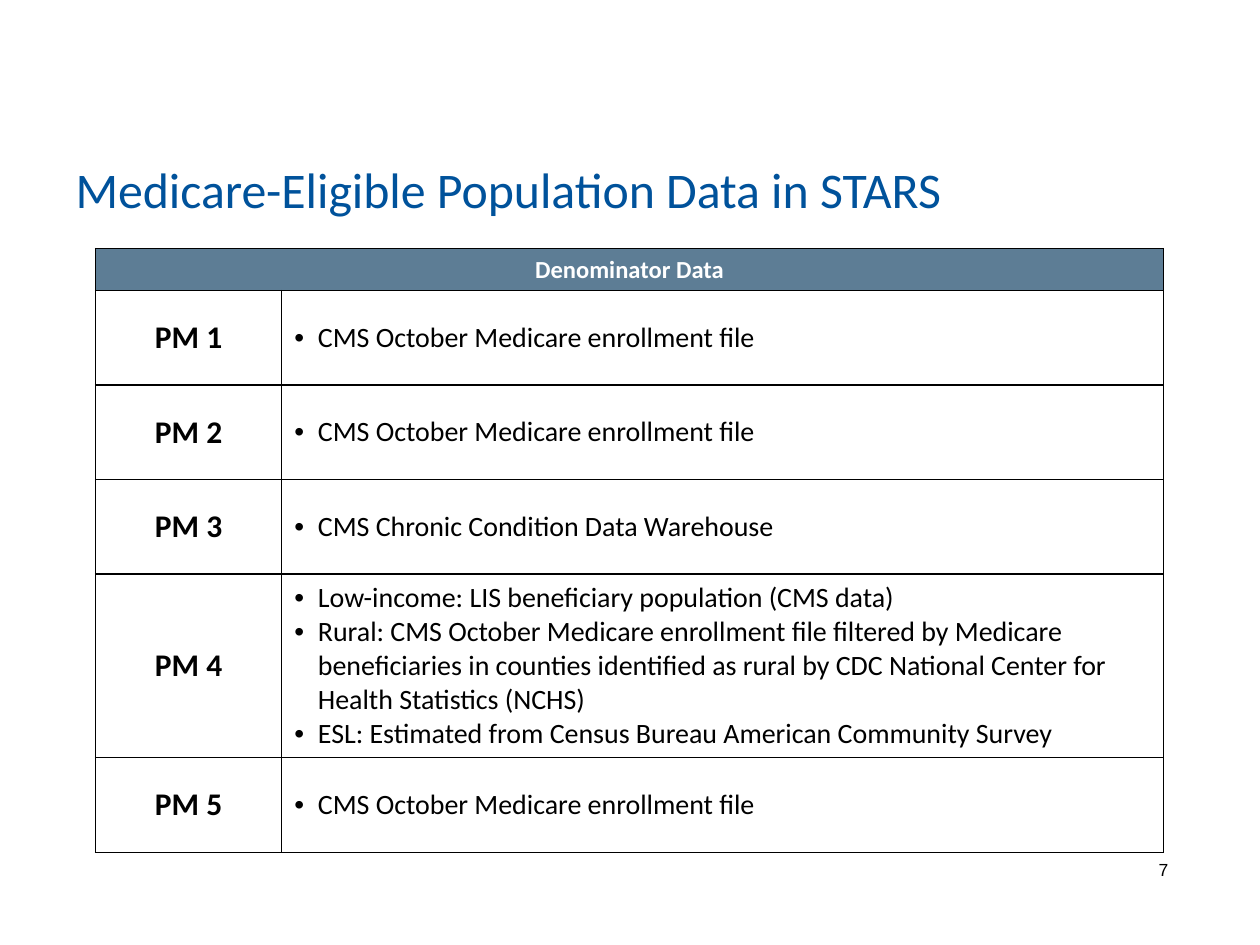
from dataclasses import dataclass

from lxml.etree import SubElement
from pptx import Presentation
from pptx.dml.color import RGBColor
from pptx.enum.text import MSO_ANCHOR as Anchor, MSO_AUTO_SIZE as AutoSize, PP_ALIGN as Align
from pptx.oxml.ns import qn
from pptx.slide import Slide
from pptx.table import Table, _Cell as Cell
from pptx.text.text import _Paragraph as Paragraph
from pptx.util import Length, Pt


@dataclass(frozen=True)
class Theme:
    """Colours, fonts and type sizes of the slide."""
    title: str = "00529B"
    header: str = "5D7D95"
    paper: str = "FFFFFF"
    ink: str = "000000"
    font: str = "Calibri"
    number_font: str = "Arial"
    title_size: Length = Pt(28.5)
    header_size: Length = Pt(14)
    label_size: Length = Pt(18)
    source_size: Length = Pt(16)
    number_size: Length = Pt(10)
    border: Length = Pt(0.75)
    indent: Length = Pt(13.5)


@dataclass(frozen=True)
class Measure:
    """One performance measure with its data sources."""
    label: str
    sources: tuple[str, ...]
    height: Length = Pt(54)


THEME = Theme()
ENROLLMENT = ("CMS October Medicare enrollment file",)
MEASURES = (
    Measure("PM 1", ENROLLMENT),
    Measure("PM 2", ENROLLMENT),
    Measure("PM 3", ("CMS Chronic Condition Data Warehouse",)),
    Measure("PM 4", (
        "Low-income: LIS beneficiary population (CMS data)",
        "Rural: CMS October Medicare enrollment file filtered by Medicare "
        "beneficiaries in counties identified as rural by CDC National Center "
        "for Health Statistics (NCHS)",
        "ESL: Estimated from Census Bureau American Community Survey",
    ), Pt(105)),
    Measure("PM 5", ENROLLMENT),
)


def add_run(paragraph: Paragraph, text: str, size: Length, color: str,
            bold: bool = False, font: str = THEME.font) -> None:
    """Add one formatted run to a paragraph."""
    run = paragraph.add_run()
    run.text = text
    run.font.name = font
    run.font.size = size
    run.font.bold = bold
    run.font.color.rgb = RGBColor.from_string(color)


def add_bullet(paragraph: Paragraph) -> None:
    """Give a paragraph a hanging round bullet."""
    properties = paragraph._p.get_or_add_pPr()
    properties.set("marL", str(THEME.indent))
    properties.set("indent", str(-THEME.indent))
    SubElement(properties, qn("a:buFont"), typeface="Arial")
    SubElement(properties, qn("a:buChar"), char="•")


def style_cell(cell: Cell, fill: str) -> None:
    """Set the borders, fill and vertical anchor of a cell."""
    properties = cell._tc.get_or_add_tcPr()
    for side in ("lnL", "lnR", "lnT", "lnB"):
        line = SubElement(properties, qn(f"a:{side}"), w=str(THEME.border))
        SubElement(SubElement(line, qn("a:solidFill")), qn("a:srgbClr"), val=THEME.ink)
    cell.fill.solid()
    cell.fill.fore_color.rgb = RGBColor.from_string(fill)
    cell.vertical_anchor = Anchor.MIDDLE


def add_centred(cell: Cell, text: str, size: Length, color: str) -> None:
    """Write one bold centred line in a cell."""
    paragraph = cell.text_frame.paragraphs[0]
    paragraph.alignment = Align.CENTER
    add_run(paragraph, text, size, color, bold=True)


def fill_measure(table: Table, row: int, measure: Measure) -> None:
    """Write the label and bulleted sources of a measure in a row."""
    table.rows[row].height = measure.height
    label, sources = table.cell(row, 0), table.cell(row, 1)
    for cell in (label, sources):
        style_cell(cell, THEME.paper)
    add_centred(label, measure.label, THEME.label_size, THEME.ink)
    frame = sources.text_frame
    for index, source in enumerate(measure.sources):
        paragraph = frame.add_paragraph() if index else frame.paragraphs[0]
        add_bullet(paragraph)
        add_run(paragraph, source, THEME.source_size, THEME.ink)


def add_title(slide: Slide, text: str) -> None:
    """Place and write the slide title."""
    title = slide.shapes.title
    title.left, title.top, title.width, title.height = Pt(36), Pt(83.5), Pt(648), Pt(48)
    frame = title.text_frame
    frame.auto_size = AutoSize.NONE
    frame.vertical_anchor = Anchor.MIDDLE
    frame.paragraphs[0].alignment = Align.LEFT
    add_run(frame.paragraphs[0], text, THEME.title_size, THEME.title)


def add_measure_table(slide: Slide) -> None:
    """Add the table of denominator data."""
    header_height = Pt(24)
    widths = (Pt(106.5), Pt(504))
    height = header_height + sum(measure.height for measure in MEASURES)
    table = slide.shapes.add_table(
        len(MEASURES) + 1, len(widths), Pt(54.5), Pt(142), sum(widths), height).table
    for column, width in zip(table.columns, widths):
        column.width = width
    table.rows[0].height = header_height
    header = table.cell(0, 0)
    header.merge(table.cell(0, 1))
    for cell in table.rows[0].cells:
        style_cell(cell, THEME.header)
    header.vertical_anchor = Anchor.TOP
    add_centred(header, "Denominator Data", THEME.header_size, THEME.paper)
    for row, measure in enumerate(MEASURES, start=1):
        fill_measure(table, row, measure)


def add_slide_number(slide: Slide, number: str) -> None:
    """Write the slide number below the table."""
    frame = slide.shapes.add_textbox(Pt(655), Pt(487.5), Pt(58), Pt(27)).text_frame
    frame.word_wrap = True
    add_run(frame.paragraphs[0], number, THEME.number_size, THEME.ink, font=THEME.number_font)


def main() -> None:
    """Build and save the presentation."""
    presentation = Presentation()
    presentation.slide_width, presentation.slide_height = Pt(720), Pt(540)
    slide = presentation.slides.add_slide(presentation.slide_layouts.get_by_name("Title Only"))
    add_title(slide, "Medicare-Eligible Population Data in STARS")
    add_slide_number(slide, "7")
    add_measure_table(slide)
    presentation.save("out.pptx")


if __name__ == "__main__":
    main()
